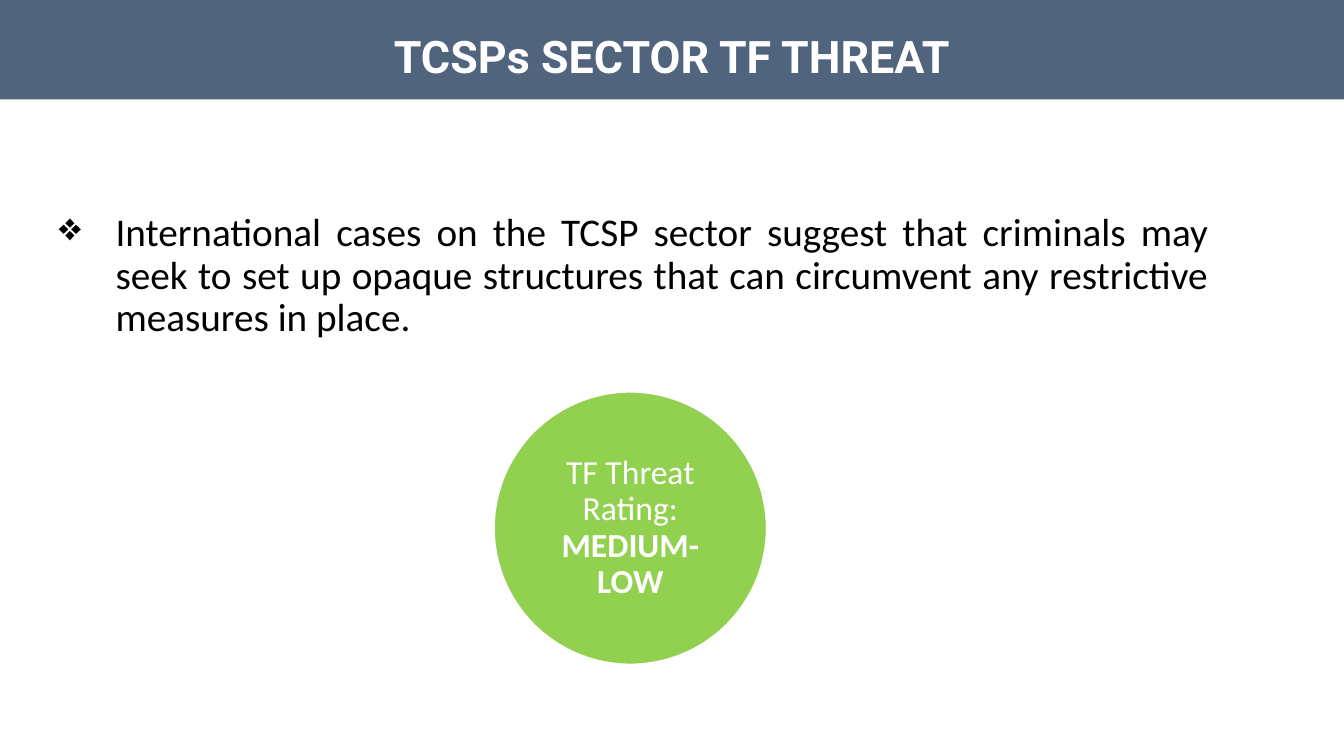
from dataclasses import dataclass

from lxml import etree
from pptx import Presentation
from pptx.dml.color import RGBColor
from pptx.enum.shapes import MSO_SHAPE
from pptx.enum.text import MSO_ANCHOR, PP_ALIGN
from pptx.oxml.ns import qn
from pptx.util import Pt

RECTANGLE, OVAL = MSO_SHAPE.RECTANGLE, MSO_SHAPE.OVAL
TOP, MIDDLE = MSO_ANCHOR.TOP, MSO_ANCHOR.MIDDLE
CENTER, JUSTIFY = PP_ALIGN.CENTER, PP_ALIGN.JUSTIFY


@dataclass(frozen=True)
class Theme:
    slate = RGBColor(0x51, 0x64, 0x7E)
    green = RGBColor(0x92, 0xD0, 0x50)
    white = RGBColor(0xFF, 0xFF, 0xFF)
    black = RGBColor(0x00, 0x00, 0x00)
    heading_font = "Roboto"
    body_font = "Calibri"
    title_size = Pt(32)
    body_size = Pt(28)
    rating_size = Pt(24)


theme = Theme()


def add_filled(kind, left, top, width, height, fill):
    shape = slide.shapes.add_shape(kind, Pt(left), Pt(top), Pt(width), Pt(height))
    shape.shadow.inherit = False
    shape.fill.solid()
    shape.fill.fore_color.rgb = fill
    shape.line.fill.background()
    return shape


def set_text(shape, texts, font, size, color, align, anchor, spacing, insets):
    """Write one paragraph, a run per text; insets are left, top, right, bottom."""
    frame = shape.text_frame
    frame.word_wrap = True
    frame.vertical_anchor = anchor
    frame.margin_left, frame.margin_top, frame.margin_right, frame.margin_bottom = map(Pt, insets)
    paragraph = frame.paragraphs[0]
    paragraph.alignment = align
    paragraph.line_spacing = spacing
    paragraph.font.name = font
    paragraph.font.size = size
    paragraph.font.color.rgb = color
    for text in texts:
        paragraph.add_run().text = text
    return paragraph


presentation = Presentation()
presentation.slide_width, presentation.slide_height = Pt(960), Pt(540)
slide = presentation.slides.add_slide(presentation.slide_layouts[6])

# Title band
title_band = add_filled(RECTANGLE, 0, 0, 960, 71, theme.slate)
title = set_text(title_band, ["TCSPs SECTOR TF THREAT"], theme.heading_font, theme.title_size,
                 theme.white, CENTER, MIDDLE, 1.07, (7.2, 9, 7.2, 3.6))
title.font.bold = True

# Finding with its diamond bullet
finding_box = add_filled(RECTANGLE, 30, 103, 840, 157, theme.white)
finding = set_text(
    finding_box,
    ["International cases on the TCSP sector suggest that criminals may seek to set up "
     "opaque structures that can circumvent any restrictive measures in place."],
    theme.body_font, theme.body_size, theme.black, JUSTIFY, TOP, 0.9, (7.2, 49, 7.2, 3.6))
finding_format = finding._p.get_or_add_pPr()
finding_format.set("marL", str(Pt(45.5)))
finding_format.set("indent", str(Pt(-40.5)))
bullet = etree.Element(qn("a:buChar"), char="❖")
finding_format.find(qn("a:defRPr")).addprevious(bullet)

# Threat rating: circle with its inscribed text area
circle_left, circle_top, diameter = 353, 280, 194.5
text_side = 137.5
text_offset = (diameter - text_side) / 2
rating_circle = add_filled(OVAL, circle_left, circle_top, diameter, diameter, theme.green)
rating_circle.line.color.rgb = theme.white
rating_circle.line.width = Pt(1)
rating_area = add_filled(RECTANGLE, circle_left + text_offset, circle_top + text_offset,
                         text_side, text_side, theme.green)
rating = set_text(rating_area, ["TF Threat Rating: ", "MEDIUM-LOW"], theme.body_font,
                  theme.rating_size, theme.white, CENTER, MIDDLE, 0.9, (2, 2, 2, 2))
rating.runs[1].font.bold = True

presentation.save("out.pptx")
